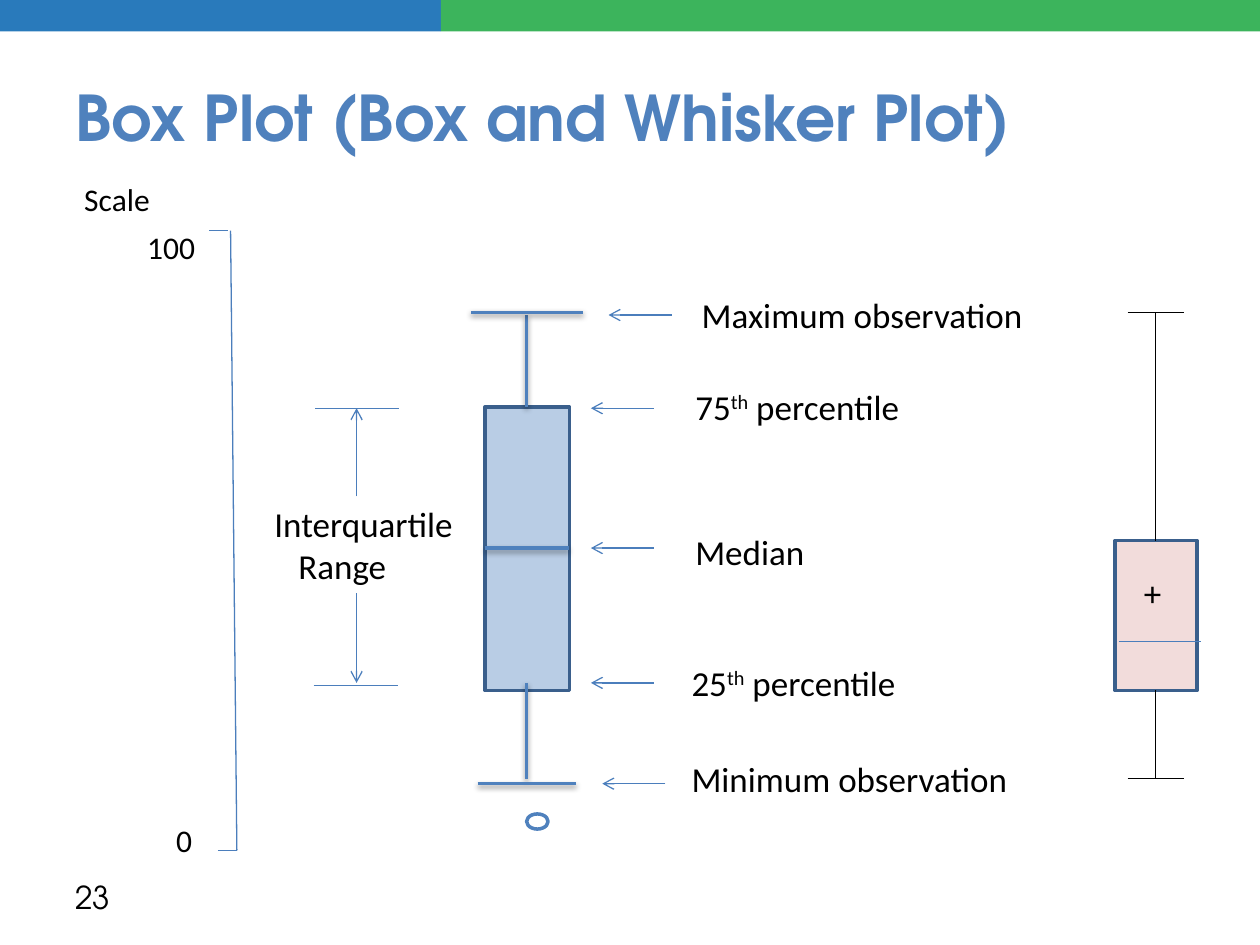
import collections

import lxml.etree
import pptx
import pptx.dml.color
import pptx.enum.shapes
import pptx.enum.text
import pptx.oxml
import pptx.oxml.ns
import pptx.util

Inches = pptx.util.Inches
Pt = pptx.util.Pt
RGBColor = pptx.dml.color.RGBColor
Shapes = pptx.enum.shapes.MSO_SHAPE
Anchor = pptx.enum.text.MSO_ANCHOR
Box = collections.namedtuple("Box", "left top width height")

BLACK = RGBColor(0x00, 0x00, 0x00)
WHITE = RGBColor(0xFF, 0xFF, 0xFF)
HEADER_BLUE = RGBColor(0x29, 0x7A, 0xBB)
HEADER_GREEN = RGBColor(0x3C, 0xB4, 0x5C)
ACCENT = RGBColor(0x4F, 0x81, 0xBD)
THIN_BLUE = RGBColor(0x4B, 0x7E, 0xBC)
OUTLINE = RGBColor(0x3A, 0x5F, 0x8C)
PALE_BLUE = RGBColor(0xB9, 0xCD, 0xE5)
PALE_PINK = RGBColor(0xF2, 0xDC, 0xDB)

HEADING = "TeX Gyre Adventor"
LABEL = {"name": "Calibri", "size": Pt(20)}
SCALE_LABEL = {"name": "Calibri", "size": Pt(18)}
SHADOW = (
    '<a:outerShdw %s blurRad="40000" dist="20000" dir="5400000" rotWithShape="0">'
    '<a:srgbClr val="000000"><a:alpha val="38000"/></a:srgbClr></a:outerShdw>'
    % pptx.oxml.ns.nsdecls("a")
)


def set_attributes(target, values):
    for name, value in values.items():
        setattr(target, name, value)


def add_box(slide, kind, box, fill, line=None):
    shape = slide.shapes.add_shape(kind, *map(Inches, box))
    shape.shadow.inherit = False
    shape.fill.solid()
    shape.fill.fore_color.rgb = fill
    if line is None:
        shape.line.fill.background()
    else:
        shape.line.color.rgb = line
        shape.line.width = Pt(2)


def add_line(slide, box, start, end, color=THIN_BLUE, width=0.75, arrow=False, shadow=False):
    connector = slide.shapes.add_connector(
        pptx.enum.shapes.MSO_CONNECTOR.STRAIGHT,
        Inches(box.left + start[0]), Inches(box.top + start[1]),
        Inches(box.left + end[0]), Inches(box.top + end[1]),
    )
    connector.line.color.rgb = color
    connector.line.width = Pt(width)
    qn = pptx.oxml.ns.qn
    if arrow:
        outline = connector.line._get_or_add_ln()
        lxml.etree.SubElement(outline, qn("a:tailEnd"), type="arrow")
    effects = lxml.etree.SubElement(connector._element.spPr, qn("a:effectLst"))
    if shadow:
        effects.append(pptx.oxml.parse_xml(SHADOW))


def add_text(slide, box, paragraphs, font, color=BLACK, anchor=Anchor.TOP):
    frame = slide.shapes.add_textbox(*map(Inches, box)).text_frame
    set_attributes(frame, {"word_wrap": True, "vertical_anchor": anchor})
    for index, runs in enumerate(paragraphs):
        paragraph = frame.add_paragraph() if index else frame.paragraphs[0]
        for text in runs:
            run = paragraph.add_run()
            run.text = text
            set_attributes(run.font, font)
            run.font.color.rgb = color
            if text == "th":
                run._r.get_or_add_rPr().set("baseline", "30000")
    return frame


def add_header(slide, box):
    split = box.width * 0.35
    add_box(slide, Shapes.RECTANGLE, box._replace(width=split), HEADER_BLUE)
    green = box._replace(left=box.left + split, width=box.width - split)
    add_box(slide, Shapes.RECTANGLE, green, HEADER_GREEN)


def add_title(slide, box):
    font = {"name": HEADING, "size": Pt(36), "bold": True}
    add_text(slide, box, [["Box Plot (Box and Whisker Plot)"]], font, ACCENT, Anchor.MIDDLE)


def add_slide_number(slide, box):
    font = {"name": HEADING, "size": Pt(18)}
    add_text(slide, box, [["23"]], font, anchor=Anchor.MIDDLE)


def add_scale(slide, box):
    labels = [("Scale", 0, 0, 1.08), ("100", 0.5, 0.38, 0.67), ("0", 0.73, 5.09, 0.36)]
    for text, left, top, width in labels:
        place = Box(box.left + left, box.top + top, width, 0.4)
        add_text(slide, place, [[text]], SCALE_LABEL)
    top_end, bottom_end = (box.width - 0.05, 0.45), (box.width, box.height)
    add_line(slide, box, top_end, bottom_end)
    for x, y in [(box.width - 0.22, 0.45), (box.width - 0.15, box.height)]:
        add_line(slide, box, (x, y), (x + 0.15, y))


def add_interquartile_range(slide, box):
    for left, y in [(0.42, 0), (0.41, box.height)]:
        add_line(slide, box, (left, y), (left + 0.67, y))
    for start, end in [(0.7, 0), (1.47, box.height - 0.02)]:
        add_line(slide, box, (0.75, start), (0.75, end), arrow=True)
    place = box._replace(top=box.top + 0.7, height=0.77)
    frame = add_text(slide, place, [["Interquartile"], ["Range"]], LABEL)
    frame.paragraphs[1]._p.get_or_add_pPr().set("marL", str(Inches(0.19)))


def add_main_plot(slide, box):
    quartiles = Box(box.left + 0.11, box.top + 0.75, 0.67, 2.25)
    add_box(slide, Shapes.RECTANGLE, quartiles, PALE_BLUE, OUTLINE)
    strokes = [
        ((0.11, 1.87), (0.78, 1.87)),
        ((0.44, 2.94), (0.44, 3.7)),
        ((0.44, 0.02), (0.44, 0.75)),
        ((0, 0), (box.width, 0)),
        ((0.05, 3.74), (0.83, 3.74)),
    ]
    for start, end in strokes:
        add_line(slide, box, start, end, ACCENT, 2, shadow=True)
    outlier = Box(box.left + 0.44, box.top + box.height - 0.12, 0.17, 0.12)
    add_box(slide, Shapes.OVAL, outlier, WHITE, ACCENT)


def add_annotations(slide, box):
    rows = [
        (["Maximum observation"], 0.78, 0, 0.14, 0.22),
        (["75", "th", " percentile"], 0.73, 0.73, 0, 0.96),
        (["Median"], 0.73, 1.88, 0, 2.07),
        (["25", "th", " percentile"], 0.7, 2.92, 0, 3.14),
        (["Minimum observation"], 0.7, 3.68, 0.09, 3.94),
    ]
    for runs, left, top, tip, arrow_y in rows:
        place = Box(box.left + left, box.top + top, box.width - left, 0.44)
        add_text(slide, place, [runs], LABEL)
        add_line(slide, box, (tip + 0.5, arrow_y), (tip, arrow_y), arrow=True)


def add_skewed_plot(slide, box):
    quartiles = Box(box.left, box.top + 1.81, 0.65, 1.19)
    add_box(slide, Shapes.RECTANGLE, quartiles, PALE_PINK, OUTLINE)
    add_line(slide, box, (0.03, 2.61), (box.width, 2.61))
    add_text(slide, Box(box.left + 0.13, box.top + 2.01, 0.45, 0.44), [["+"]], LABEL)
    for start, end in [(0, 1.81), (3, box.height)]:
        add_line(slide, box, (0.32, start), (0.32, end), BLACK)
    for y in (0, box.height):
        add_line(slide, box, (0.1, y), (0.55, y), BLACK)


def main():
    presentation = pptx.Presentation()
    set_attributes(presentation, {"slide_width": Inches(10), "slide_height": Inches(7.5)})
    slide = presentation.slides.add_slide(presentation.slide_layouts[6])
    add_header(slide, Box(0, 0, 10, 0.25))
    add_title(slide, Box(0.5, 0.3, 9, 1.25))
    add_slide_number(slide, Box(0.5, 6.92, 2.33, 0.4))
    add_annotations(slide, Box(4.69, 2.28, 3.77, 4.12))
    add_main_plot(slide, Box(3.74, 2.48, 0.89, 4.1))
    add_scale(slide, Box(0.57, 1.38, 1.31, 5.37))
    add_interquartile_range(slide, Box(2.08, 3.24, 1.67, 2.2))
    add_skewed_plot(slide, Box(8.85, 2.48, 0.68, 3.7))
    presentation.save("out.pptx")


if __name__ == "__main__":
    main()
